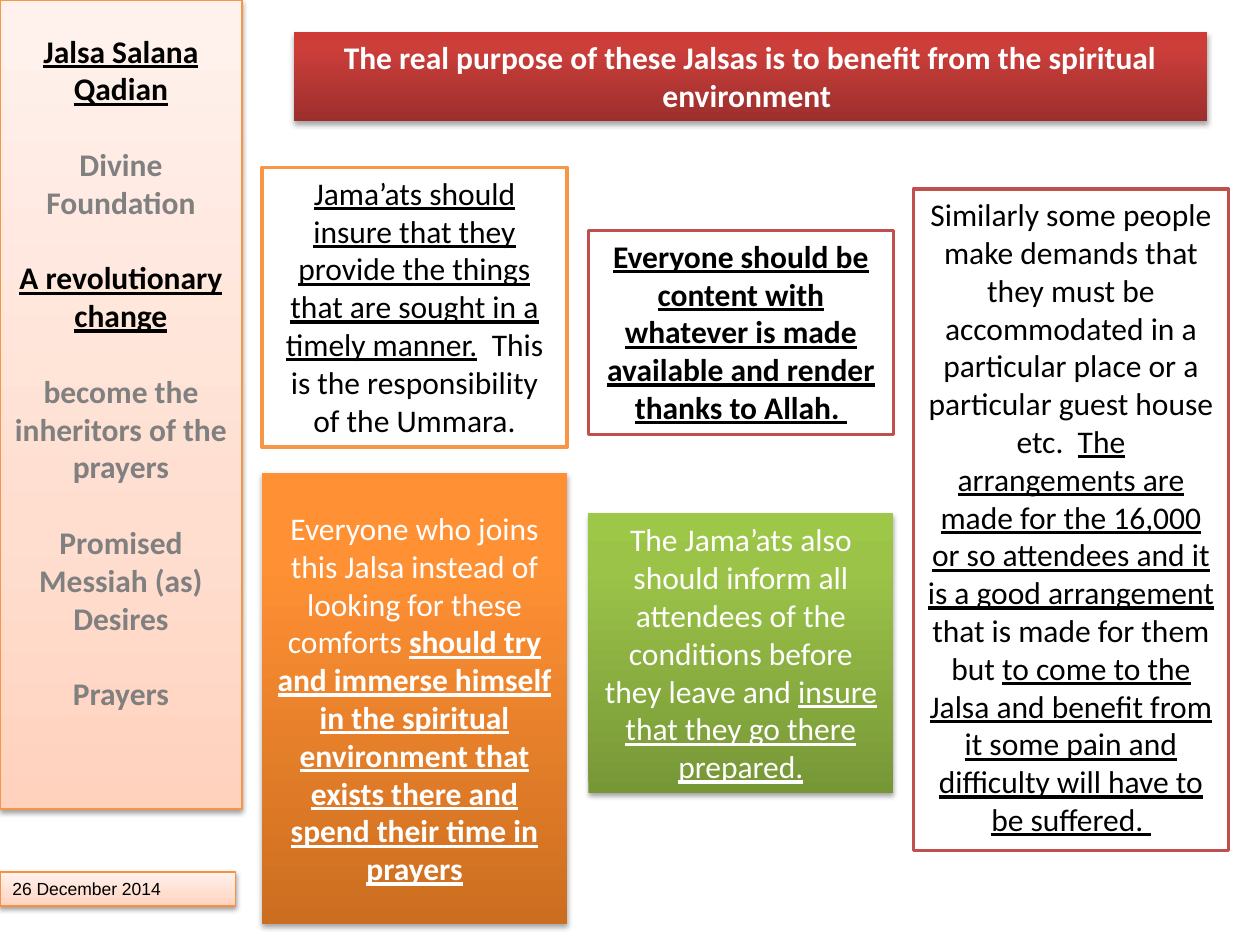
"""Build the Jalsa Salana slide on guest arrangements and spiritual purpose."""
from lxml.etree import SubElement
from pptx import Presentation
from pptx.dml.color import RGBColor
from pptx.enum.shapes import MSO_SHAPE as Shape
from pptx.enum.text import MSO_ANCHOR as Anchor, PP_ALIGN as Align
from pptx.oxml.ns import qn
from pptx.util import Inches, Pt

BLACK = RGBColor(0x00, 0x00, 0x00)
WHITE = RGBColor(0xFF, 0xFF, 0xFF)
GRAY = RGBColor(0x80, 0x80, 0x80)
RED = RGBColor(0xC0, 0x50, 0x4D)
ORANGE = RGBColor(0xF7, 0x96, 0x46)
PEACH_EDGE = RGBColor(0xF6, 0x92, 0x40)

RED_FADE = ((0, RGBColor(0x9C, 0x2F, 0x2D)), (80, RGBColor(0xCB, 0x3E, 0x3A)),
            (100, RGBColor(0xCE, 0x3B, 0x37)))
GREEN_FADE = ((0, RGBColor(0x77, 0x97, 0x37)), (80, RGBColor(0x9B, 0xC3, 0x48)),
              (100, RGBColor(0x9D, 0xC7, 0x46)))
ORANGE_FADE = ((0, RGBColor(0xCC, 0x6E, 0x20)), (80, RGBColor(0xFF, 0x90, 0x34)),
               (100, RGBColor(0xFF, 0x91, 0x36)))
PEACH_FADE = ((0, RGBColor(0xFF, 0xD2, 0xBD)), (35, RGBColor(0xFF, 0xDE, 0xD0)),
              (100, RGBColor(0xFF, 0xF2, 0xED)))

TITLE = "The real purpose of these Jalsas is to benefit from the spiritual environment "
DATE = "26 December 2014"
TOPICS = [
    ("Jalsa Salana Qadian", True),
    ("Divine Foundation", False),
    ("A revolutionary change", True),
    ("become the inheritors of the prayers", False),
    ("Promised Messiah (as) Desires", False),
    ("Prayers", False),
]

COLUMNS = (2.08, 4.67)
CARD_WIDTH = 2.42
OUTLINED_CARDS = [
    ((COLUMNS[0], 1.33, CARD_WIDTH, 2.22), ORANGE, [
        ("Jama’ats should insure that they provide the things that are sought "
         "in a timely manner.", "u"),
        ("  This is the responsibility of the Ummara.", "")]),
    ((COLUMNS[1], 1.83, CARD_WIDTH, 1.62), RED, [
        ("Everyone should be content with whatever is made available and "
         "render thanks to Allah. ", "bu")]),
    ((7.25, 1.5, 2.5, 5.25), RED, [
        ("Similarly some people make demands that they must be accommodated in "
         "a particular place or a particular guest house etc.  ", ""),
        ("The arrangements are made for the 16,000 or so attendees and it is a "
         "good arrangement ", "u"),
        ("that is made for them but ", ""),
        ("to come to the Jalsa and benefit from it some pain and difficulty "
         "will have to be suffered. ", "u")]),
]
FILLED_CARDS = [
    ((COLUMNS[0], 3.75, CARD_WIDTH, 3.58), ORANGE_FADE, [
        ("Everyone who joins this Jalsa instead of looking for these comforts ", ""),
        ("should try and immerse himself in the spiritual environment that "
         "exists there and spend their time in prayers", "bu")]),
    ((COLUMNS[1], 4.07, CARD_WIDTH, 2.22), GREEN_FADE, [
        ("The Jama’ats also should inform all attendees of the conditions "
         "before they leave and ", ""),
        ("insure that they go there prepared.", "u")]),
]


def add_box(slide, place, edge=None, weight=2, anchor=Anchor.TOP):
    box = slide.shapes.add_shape(Shape.RECTANGLE, *map(Inches, place))
    box.shadow.inherit = False
    box.fill.solid()
    box.fill.fore_color.rgb = WHITE
    if edge is None:
        box.line.fill.background()
    else:
        box.line.color.rgb = edge
        box.line.width = Pt(weight)
    box.text_frame.word_wrap = True
    box.text_frame.vertical_anchor = anchor
    return box


def add_shaded_box(slide, place, fade, opacity=35, distance=1.8, **look):
    box = add_box(slide, place, **look)
    box.fill.gradient()
    box.fill.gradient_angle = 90
    properties = box.element.spPr
    stops = properties.find(qn("a:gradFill")).find(qn("a:gsLst"))
    stops.clear()
    for percent, color in fade:
        stop = SubElement(stops, qn("a:gs"), pos=str(percent * 1000))
        SubElement(stop, qn("a:srgbClr"), val=str(color))
    shadow = SubElement(properties.find(qn("a:effectLst")), qn("a:outerShdw"),
                        blurRad=str(Pt(3.1)), dist=str(Pt(distance)),
                        dir="5400000", rotWithShape="0")
    tint = SubElement(shadow, qn("a:srgbClr"), val=str(BLACK))
    SubElement(tint, qn("a:alpha"), val=str(opacity * 1000))
    return box


def write(paragraph, runs, color, size=18, face="Calibri", align=Align.CENTER):
    paragraph.alignment = align
    for words, style in runs:
        run = paragraph.add_run()
        run.text = words
        font = run.font
        font.name, font.size, font.color.rgb = face, Pt(size), color
        font.bold, font.underline = "b" in style, "u" in style


def add_sidebar(slide):
    sidebar = add_shaded_box(slide, (0, 0, 1.92, 6.42), PEACH_FADE, 38, 1.6,
                             edge=ORANGE, weight=0.75)
    frame = sidebar.text_frame
    frame.margin_top = Inches(0.25)
    for index, (topic, current) in enumerate(TOPICS):
        paragraph = frame.add_paragraph() if index else frame.paragraphs[0]
        if index:
            paragraph.space_before = Pt(21.6)
        write(paragraph, [(topic, "bu" if current else "b")],
              BLACK if current else GRAY)


def main():
    deck = Presentation()
    deck.slide_width, deck.slide_height = Inches(10), Inches(7.5)
    slide = deck.slides.add_slide(deck.slide_layouts[6])

    add_sidebar(slide)
    date = add_shaded_box(slide, (0, 6.92, 1.87, 0.27), PEACH_FADE, 38, 1.6,
                          edge=PEACH_EDGE, weight=0.75)
    write(date.text_frame.paragraphs[0], [(DATE, "")], BLACK, 10, "Arial", Align.LEFT)
    title = add_shaded_box(slide, (2.33, 0.25, 7.25, 0.71), RED_FADE)
    write(title.text_frame.paragraphs[0], [(TITLE, "b")], WHITE)

    for place, edge, runs in OUTLINED_CARDS:
        card = add_box(slide, place, edge)
        write(card.text_frame.paragraphs[0], runs, BLACK)
    for place, fade, runs in FILLED_CARDS:
        card = add_shaded_box(slide, place, fade, anchor=Anchor.MIDDLE)
        write(card.text_frame.paragraphs[0], runs, WHITE)

    deck.save("out.pptx")


if __name__ == "__main__":
    main()
